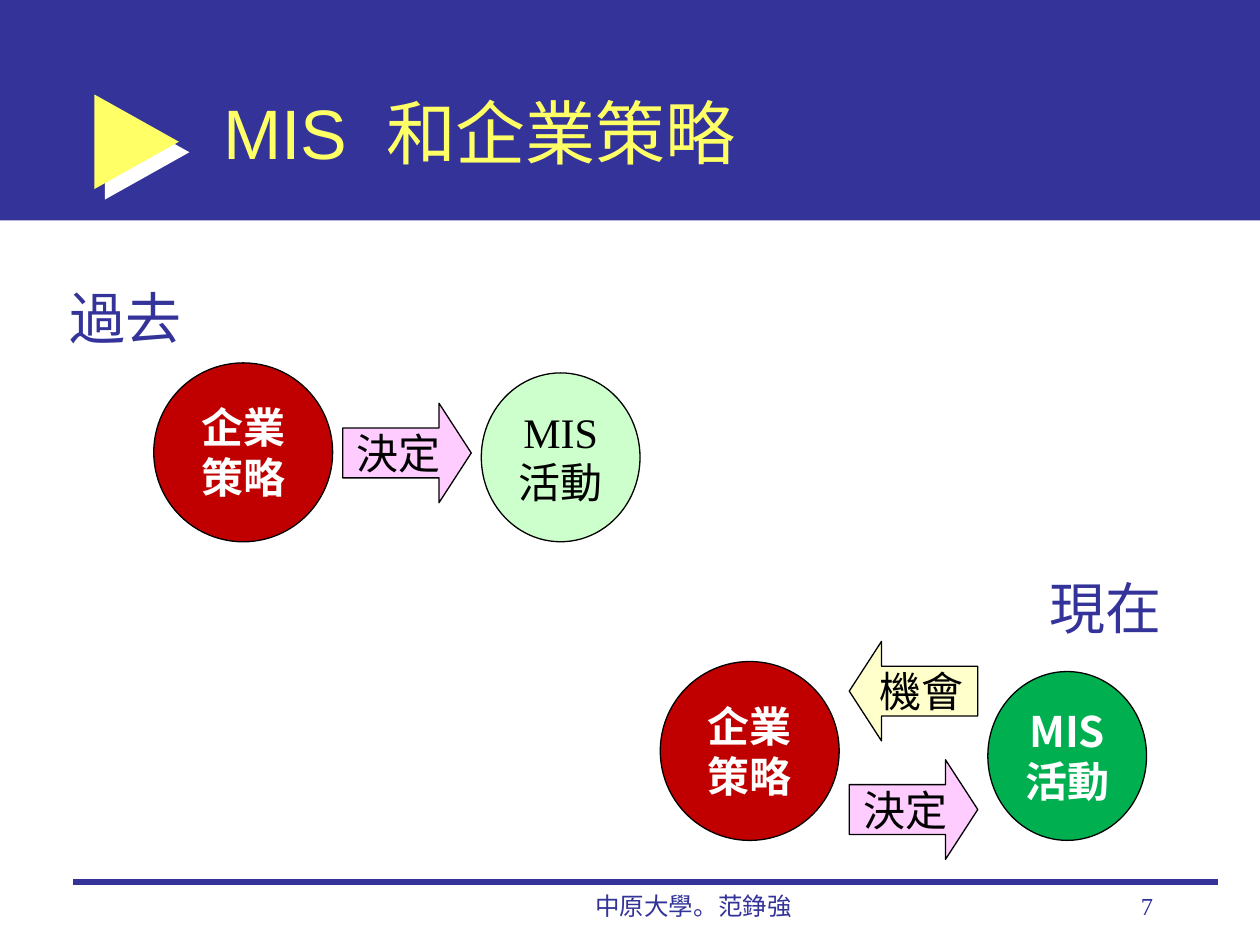
import pptx
import pptx.util
import pptx.dml.color
import pptx.enum.shapes
import pptx.enum.text
import pptx.oxml
import pptx.oxml.ns

Inches, Pt = pptx.util.Inches, pptx.util.Pt
RGB = pptx.dml.color.RGBColor.from_string
KIND = pptx.enum.shapes.MSO_SHAPE
ALIGN = pptx.enum.text.PP_ALIGN
ANCHOR = pptx.enum.text.MSO_ANCHOR
qn = pptx.oxml.ns.qn
NS = pptx.oxml.ns.nsdecls("a")

COLOR = {
    "navy": "333399", "yellow": "FFFF66", "white": "FFFFFF", "black": "000000",
    "red": "C00000", "mint": "CCFFCC", "green": "00B050",
    "pink": "FFCCFF", "cream": "FFFFCC",
}
SERIF, SANS, HAN = "Times New Roman", "Arial", "Noto Sans CJK SC"

# Content
TITLE = ["MIS", " ", "和企業策略"]
LABELS = [  # text, box, size, alignment
    ("中原大學。范錚強", (3.92, 7, 3.17, 0.5), 14, ALIGN.CENTER),
    ("7", (7.17, 7, 2.08, 0.5), 14, ALIGN.RIGHT),
    ("過去", (0.45, 2.16, 1.16, 0.63), 32, ALIGN.LEFT),
    ("現在", (8.23, 4.46, 1.16, 0.63), 32, ALIGN.LEFT),
]
STAGES = [  # origin, activity fill, bold activity, arrows (text, kind, fill, y)
    ((1.22, 2.88), "mint", False,
     [("決定", KIND.RIGHT_ARROW, "pink", 0.32)]),
    ((5.24, 5.25), "green", True,
     [("決定", KIND.RIGHT_ARROW, "pink", 0.78),
      ("機會", KIND.LEFT_ARROW, "cream", -0.16)]),
]

prs = pptx.Presentation()
prs.slide_width, prs.slide_height = Inches(10), Inches(7.5)
slide = prs.slides.add_slide(prs.slide_layouts[5])
shapes = slide.shapes


def style(frame, size, font, color, align, bold=False, line=None):
    for para in frame.paragraphs:
        para.alignment = align
        if line:
            para.line_spacing = Pt(round(size * line, 1))
        for run in para.runs:
            run.font.size, run.font.name, run.font.bold = Pt(size), font, bold
            run.font.color.rgb = RGB(COLOR[color])
            east = pptx.oxml.parse_xml(f'<a:ea {NS} typeface="{HAN}"/>')
            run.font._element.find(qn("a:latin")).addnext(east)


def add_form(kind, box, fill, edge=None):
    form = shapes.add_shape(kind, *map(Inches, box))
    form.shadow.inherit = False
    form.fill.solid()
    form.fill.fore_color.rgb = RGB(COLOR[fill])
    if edge:
        form.line.color.rgb = RGB(COLOR[edge])
        form.line.width = Pt(0.75)
    else:
        form.line.fill.background()
    return form


def add_node(kind, box, fill, text, bold=False, line=None):
    node = add_form(kind, box, fill, "black")
    frame = node.text_frame
    frame.text = text
    frame.word_wrap = False
    frame.vertical_anchor = ANCHOR.MIDDLE
    style(frame, 24, HAN if bold else SERIF, "white" if bold else "black",
          ALIGN.CENTER, bold, line)
    return node


# Header band, marker and footer rule
add_form(KIND.RECTANGLE, (0, 0, 10, 1.75), "navy")
mark = add_form(KIND.RIGHT_ARROW, (0.75, 0.75, 0.67, 0.75), "yellow")
mark.adjustments[0], mark.adjustments[1] = 0.384, 1
mark._element.spPr.find(qn("a:effectLst")).append(pptx.oxml.parse_xml(
    f'<a:outerShdw {NS} dist="{Pt(8.5)}" dir="2700000" algn="ctr" '
    f'rotWithShape="0"><a:srgbClr val="{COLOR["white"]}"/></a:outerShdw>'))
rule = shapes.add_connector(pptx.enum.shapes.MSO_CONNECTOR.STRAIGHT,
                            Inches(0.58), Inches(7), Inches(9.67), Inches(7))
rule.line.color.rgb = RGB(COLOR["navy"])
rule.line.width = Pt(3)
rule._element.spPr.append(pptx.oxml.parse_xml(f"<a:effectLst {NS}/>"))

# Title, brought in front of the band
title = shapes.title
rule._element.addnext(title._element)
title.left, title.top, title.width, title.height = map(
    Inches, (1.67, 0.42, 7.58, 1.25))
frame = title.text_frame
frame.auto_size = pptx.enum.text.MSO_AUTO_SIZE.NONE
frame.vertical_anchor = ANCHOR.MIDDLE
for part in TITLE:
    frame.paragraphs[0].add_run().text = part
style(frame, 40, SANS, "yellow", ALIGN.LEFT)
# Widen the gap between the Latin and Chinese words
frame.paragraphs[0].runs[1].font._element.set("spc", "1100")

# Footer and stage labels
for text, box, size, align in LABELS:
    label = shapes.add_textbox(*map(Inches, box))
    label.text_frame.text = text
    label.text_frame.word_wrap = True
    style(label.text_frame, size, SERIF, "navy", align, line=1.3)

# Strategy and activity circles joined by arrows
for (x, y), fill, bold, arrows in STAGES:
    add_node(KIND.OVAL, (x, y, 1.42, 1.42), "red", "企業\n策略", True, 1.19)
    add_node(KIND.OVAL, (x + 2.6, y + 0.08, 1.26, 1.34), fill,
             "MIS\n活動", bold, 1.19)
    for text, kind, tint, drop in arrows:
        arrow = add_node(kind, (x + 1.5, y + drop, 1.02, 0.79), tint, text)
        arrow.adjustments[0], arrow.adjustments[1] = 0.5, 0.324

prs.save("out.pptx")
